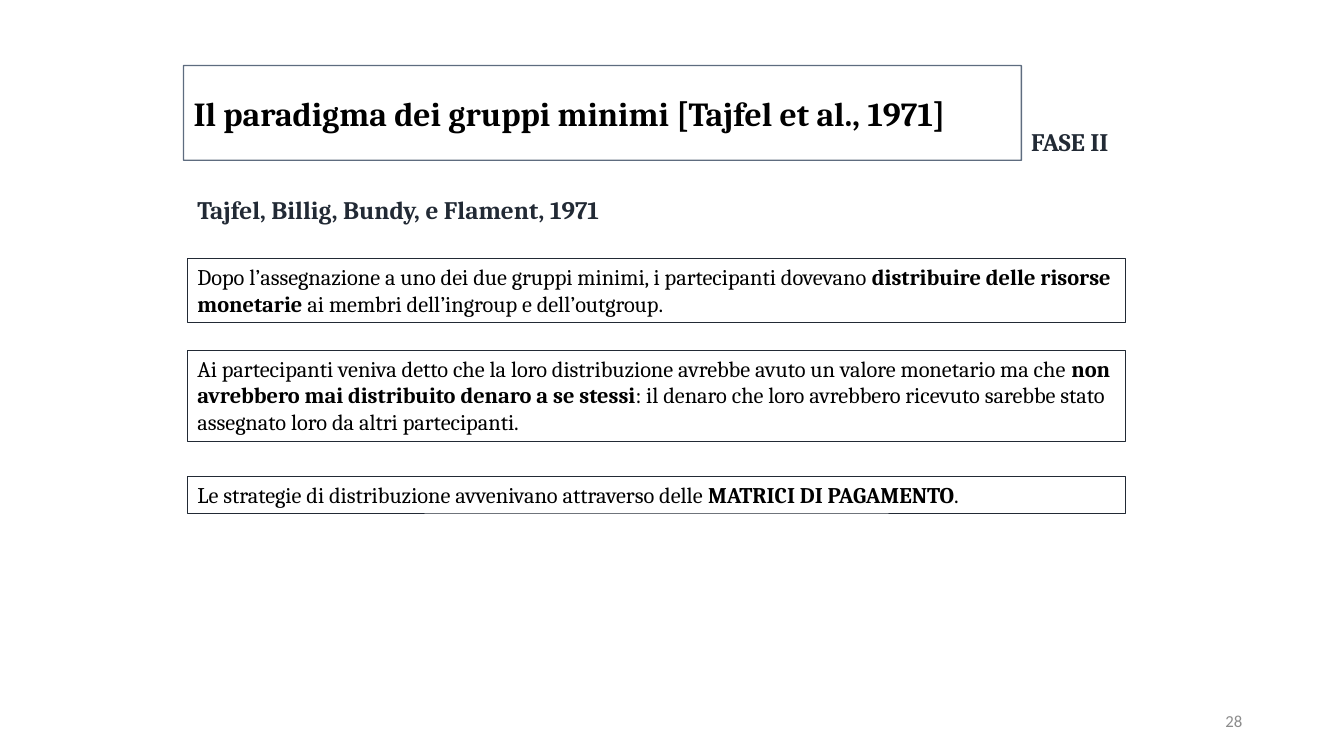
from lxml import etree
from pptx import Presentation
from pptx.dml.color import RGBColor
from pptx.enum import text as t
from pptx.oxml import ns
from pptx.util import Inches, Pt

COLORS = {"ink": "000000", "navy": "222A35", "slate": "44546A", "grey": "8C8C8C"}
TITLE = "Il paradigma dei gruppi minimi [Tajfel et al., 1971]"
# text, left, top, width, size, font, colour, bold, alignment
LABELS = [
    ("28", 9.42, 6.95, 3, 12, "Calibri", "grey", False, t.PP_ALIGN.RIGHT),
    ("Tajfel, Billig, Bundy, e Flament, 1971", 1.86, 1.88, 9.64, 18,
     "Cambria", "navy", True, t.PP_ALIGN.LEFT),
    ("FASE II", 10.13, 1.2, 1.1, 18, "Cambria", "navy", True, t.PP_ALIGN.LEFT),
]
LABEL_HEIGHT = 0.4
# top, height, text before, bold text, text after
PANELS = [
    (2.56, 0.64,
     "Dopo l’assegnazione a uno dei due gruppi minimi, i partecipanti dovevano ",
     "distribuire delle risorse monetarie ",
     "ai membri dell’ingroup e dell’outgroup."),
    (3.47, 0.91,
     "Ai partecipanti veniva detto che la loro distribuzione avrebbe avuto un "
     "valore monetario ma che ",
     "non avrebbero mai distribuito denaro a se stessi",
     ": il denaro che loro avrebbero ricevuto sarebbe stato assegnato loro da "
     "altri partecipanti."),
    (4.72, 0.37,
     "Le strategie di distribuzione avvenivano attraverso delle ",
     "MATRICI DI PAGAMENTO", "."),
]
PANEL_LEFT, PANEL_WIDTH = 1.86, 9.3


def style_run(run, size, color, bold, font="Cambria"):
    run.font.name = font
    run.font.size = Pt(size)
    run.font.bold = bold
    run.font.color.rgb = RGBColor.from_string(COLORS[color])


def set_outline(shape, color, width):
    shape.line.color.rgb = RGBColor.from_string(COLORS[color])
    shape.line.width = Pt(width)


def add_box(slide, left, top, width, height):
    box = slide.shapes.add_textbox(*map(Inches, (left, top, width, height)))
    box.text_frame.word_wrap = True
    return box


def add_title(slide):
    title = slide.shapes.title
    title.left, title.top, title.width, title.height = map(
        Inches, (1.82, 0.65, 8.31, 0.94))
    set_outline(title, "slate", 1)
    line_color = title.line._get_or_add_ln().find(".//" + ns.qn("a:srgbClr"))
    etree.SubElement(line_color, ns.qn("a:alpha"), val="86000")
    frame = title.text_frame
    frame.text = TITLE
    frame.auto_size = t.MSO_AUTO_SIZE.NONE
    frame.vertical_anchor = t.MSO_ANCHOR.MIDDLE
    frame.paragraphs[0].alignment = t.PP_ALIGN.LEFT
    style_run(frame.paragraphs[0].runs[0], 24, "ink", True)


def add_label(slide, text, left, top, width, size, font, color, bold, alignment):
    frame = add_box(slide, left, top, width, LABEL_HEIGHT).text_frame
    frame.text = text
    frame.vertical_anchor = t.MSO_ANCHOR.MIDDLE
    frame.paragraphs[0].alignment = alignment
    style_run(frame.paragraphs[0].runs[0], size, color, bold, font)


def add_panel(slide, top, height, *parts):
    panel = add_box(slide, PANEL_LEFT, top, PANEL_WIDTH, height)
    set_outline(panel, "navy", 0.25)
    paragraph = panel.text_frame.paragraphs[0]
    for index, part in enumerate(parts):
        run = paragraph.add_run()
        run.text = part
        style_run(run, 16, "ink", index == 1)


def main():
    presentation = Presentation()
    presentation.slide_width = Inches(13.33)
    presentation.slide_height = Inches(7.5)
    slide = presentation.slides.add_slide(presentation.slide_layouts[5])
    add_title(slide)
    for label in LABELS:
        add_label(slide, *label)
    for panel in PANELS:
        add_panel(slide, *panel)
    presentation.save("out.pptx")


if __name__ == "__main__":
    main()
